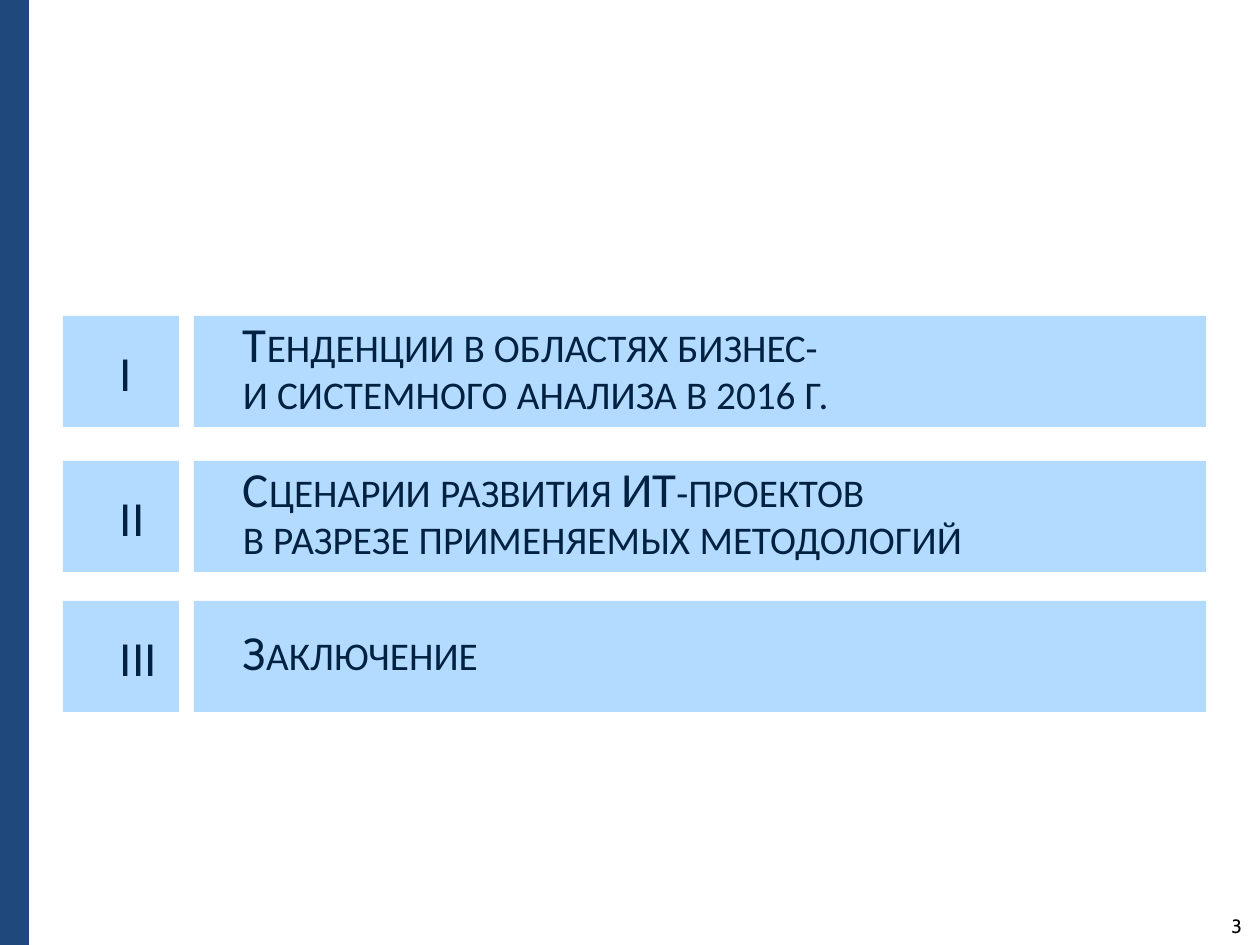
from pptx import Presentation
from pptx.dml.color import RGBColor
from pptx.enum.shapes import MSO_SHAPE
from pptx.enum.text import MSO_ANCHOR, PP_ALIGN
from pptx.util import Pt

RECT = MSO_SHAPE.RECTANGLE
MIDDLE, TOP = MSO_ANCHOR.MIDDLE, MSO_ANCHOR.TOP
LEFT, RIGHT = PP_ALIGN.LEFT, PP_ALIGN.RIGHT

# Content: numeral, section title, top of the row in px
SECTIONS = [
    ("I", "Тенденции в областях бизнес-\vи системного анализа в 2016 г.", 316),
    ("II", "Сценарии развития ИТ-проектов\vв разрезе применяемых методологий", 461),
    ("III", "Заключение", 601),
]
PAGE_NUMBER = "3"

# Layout in px
EMU_PER_PX = 914400 // 126
SLIDE_W, SLIDE_H = 1260, 945
STRIPE_W = 29
ROW_H = 111
NUMERAL_X, NUMERAL_W, NUMERAL_INDENT = 63, 116, 57
TITLE_X, TITLE_W, TITLE_INDENT = 194, 1012, 49

STRIPE_BLUE, ROW_BLUE, TEXT_NAVY, BLACK = "1F497D", "B3DAFF", "002140", "000000"


def px(value):
    return value * EMU_PER_PX


def color(hex_value):
    return RGBColor.from_string(hex_value)


def add_block(slide, x, y, w, h, fill):
    block = slide.shapes.add_shape(RECT, px(x), px(y), px(w), px(h))
    block.shadow.inherit = False
    block.fill.solid()
    block.fill.fore_color.rgb = color(fill)
    block.line.fill.background()
    return block


def write(shape, text, font_name, size, text_color, align, anchor, margins, wrap=True):
    frame = shape.text_frame
    frame.word_wrap = wrap
    frame.vertical_anchor = anchor
    (frame.margin_left, frame.margin_top,
     frame.margin_right, frame.margin_bottom) = map(px, margins)
    paragraph = frame.paragraphs[0]
    paragraph.text = text
    paragraph.alignment = align
    font = paragraph.font
    font.name, font.size = font_name, Pt(size)
    font.color.rgb = color(text_color)
    return paragraph


def add_section_block(slide, text, x, y, w, indent):
    block = add_block(slide, x, y, w, ROW_H, ROW_BLUE)
    paragraph = write(block, text, "Calibri", 28, TEXT_NAVY, LEFT, MIDDLE,
                      (indent, 6, 13, 6))
    # Small capitals
    paragraph._p.pPr.find("{*}defRPr").set("cap", "small")
    return paragraph


prs = Presentation()
prs.slide_width, prs.slide_height = px(SLIDE_W), px(SLIDE_H)
slide = prs.slides.add_slide(prs.slide_layouts[6])

# Side stripe
add_block(slide, 0, 0, STRIPE_W, SLIDE_H, STRIPE_BLUE)

# Agenda rows
for numeral, title, top in SECTIONS:
    add_section_block(slide, numeral, NUMERAL_X, top, NUMERAL_W, NUMERAL_INDENT)
    heading = add_section_block(slide, title, TITLE_X, top, TITLE_W, TITLE_INDENT)
    heading.line_spacing = 0.8

# Page number
page_box = slide.shapes.add_textbox(px(1142), px(914), px(100), px(35))
write(page_box, PAGE_NUMBER, "Cabin", 11, BLACK, RIGHT, TOP, (0, 0, 0, 0), wrap=False)

prs.save("out.pptx")
